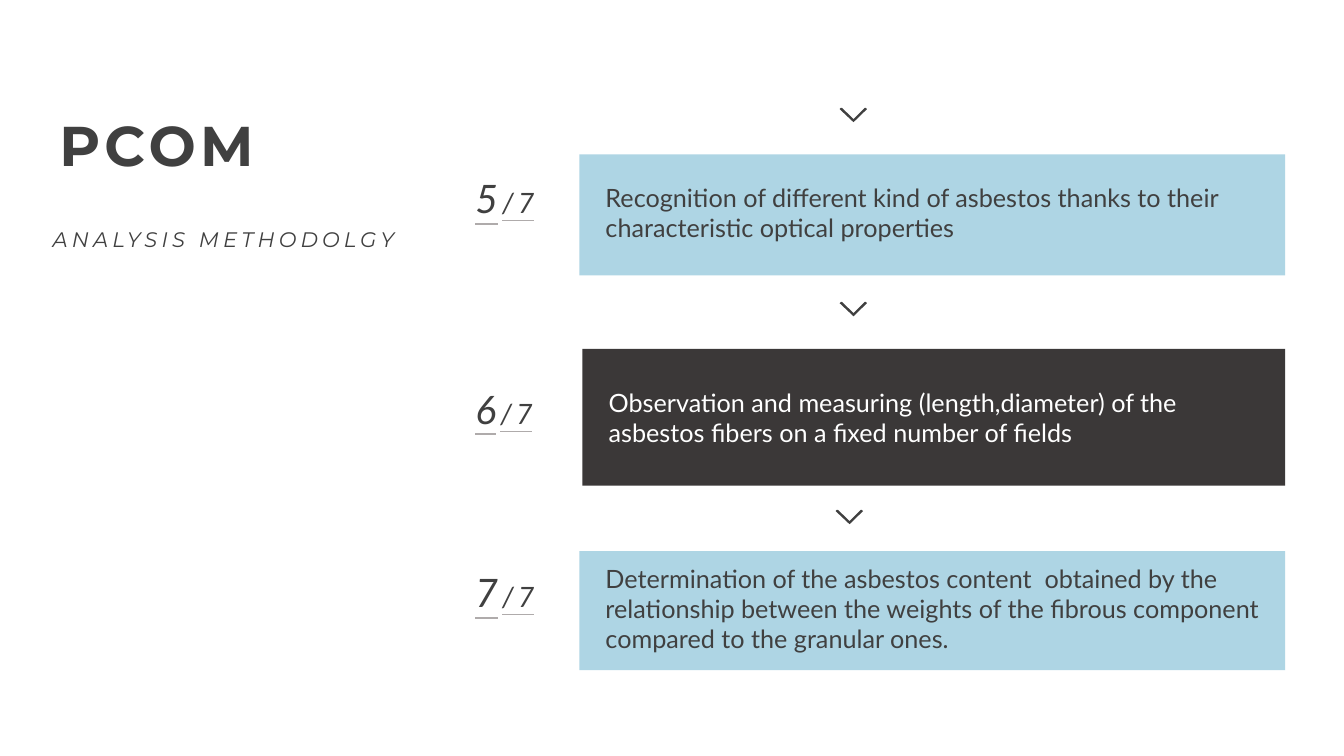
from lxml import etree
from pptx import Presentation
from pptx.dml.color import RGBColor
from pptx.enum import shapes, text as t
from pptx.oxml import ns
from pptx.util import Cm, Pt

GREY, DARK, BLUE, WHITE = "404040", "3B3838", "AED5E4", "FFFFFF"
UNDERLINE = "AFABAB"
BOX_RIGHT = 32.39

# label, label top, box left, top, height, fill, text colour, bottom inset,
# chevron left, chevron top, wording
STEPS = [
    ("5", 4.27, 14.6, 3.89, 3.05, BLUE, GREY, 0.25, 21.16, 2.72,
     "Recognition of different kind of asbestos thanks to their "
     "characteristic optical properties"),
    ("6", 9.58, 14.68, 8.79, 3.45, DARK, WHITE, 0.13, 21.16, 7.61,
     "Observation and measuring (length,diameter) of the asbestos fibers "
     "on a fixed number of fields"),
    ("7", 14.2, 14.6, 13.89, 3, BLUE, GREY, 0.25, 21.06, 12.85,
     "Determination of the asbestos content  obtained by the relationship "
     "between the weights of the fibrous component compared to the granular "
     "ones."),
]
CHEVRON = [(0, 0.03), (0.03, 0), (0.06, 0), (0.35, 0.28),
           (0.63, 0), (0.66, 0), (0.69, 0.03), (0.35, 0.36)]


def rgb(value):
    return RGBColor.from_string(value)


def add_text(paragraph, wording, size, font="Lato", color=GREY, bold=False,
             italic=False, underline=None, spacing=0):
    """Add a run; underline is the colour of the line, spacing is in points."""
    run = paragraph.add_run()
    run.text = wording
    run.font.size, run.font.name = Pt(size), font
    run.font.bold, run.font.italic = bold, italic
    run.font.color.rgb = rgb(color)
    properties = run.font._element
    if spacing:
        properties.set("spc", str(spacing * 100))
    if underline:
        run.font.underline = True
        line_fill = etree.Element(ns.qn("a:uFill"))
        solid = etree.SubElement(line_fill, ns.qn("a:solidFill"))
        etree.SubElement(solid, ns.qn("a:srgbClr"), val=underline)
        properties.find(ns.qn("a:solidFill")).addnext(line_fill)


def place_heading(placeholder, left, top, width, height, wording, **style):
    placeholder.left, placeholder.top = Cm(left), Cm(top)
    placeholder.width, placeholder.height = Cm(width), Cm(height)
    frame = placeholder.text_frame
    frame.vertical_anchor = t.MSO_ANCHOR.TOP
    frame.auto_size = t.MSO_AUTO_SIZE.NONE
    paragraph = frame.paragraphs[0]
    paragraph.alignment = t.PP_ALIGN.LEFT
    paragraph.space_before = Pt(0)
    add_text(paragraph, wording, font="Montserrat", spacing=3, **style)


def add_chevron(slide, left, top):
    points = [(Cm(left + x), Cm(top + y)) for x, y in CHEVRON]
    builder = slide.shapes.build_freeform(*points[0])
    builder.add_line_segments(points[1:])
    chevron = builder.convert_to_shape()
    chevron.shadow.inherit = False
    chevron.fill.solid()
    chevron.fill.fore_color.rgb = rgb(GREY)
    chevron.line.fill.background()


def add_step_box(slide, left, top, height, fill, color, bottom, wording):
    box = slide.shapes.add_shape(shapes.MSO_SHAPE.RECTANGLE, Cm(left), Cm(top),
                                 Cm(BOX_RIGHT - left), Cm(height))
    box.shadow.inherit = False
    box.fill.solid()
    box.fill.fore_color.rgb = rgb(fill)
    box.line.fill.background()
    frame = box.text_frame
    frame.word_wrap = True
    frame.vertical_anchor = t.MSO_ANCHOR.MIDDLE
    frame.margin_left, frame.margin_bottom = Cm(0.66), Cm(bottom)
    frame.paragraphs[0].alignment = t.PP_ALIGN.LEFT
    add_text(frame.paragraphs[0], wording, 18, color=color)


def add_step_number(slide, top, number):
    label = slide.shapes.add_textbox(Cm(11.73), Cm(top), Cm(2.46), Cm(1.45))
    label.text_frame.word_wrap = True
    paragraph = label.text_frame.paragraphs[0]
    for wording, size in ((number, 28), (f"/{len('1234567')}", 20)):
        add_text(paragraph, wording, size, italic=True, underline=UNDERLINE,
                 spacing=3)


def main():
    deck = Presentation()
    deck.slide_width, deck.slide_height = Cm(33.87), Cm(19.05)
    slide = deck.slides.add_slide(deck.slide_layouts[0])
    title, subtitle = slide.placeholders
    place_heading(title, 1.24, 2.67, 32.39, 1.96, "PCOM", size=40, bold=True)
    place_heading(subtitle, 1.07, 5.59, 18.62, 0.89, "ANALYSIS METHODOLGY",
                  size=15, italic=True)
    for (number, number_top, left, top, height, fill, color, bottom,
         chevron_left, chevron_top, wording) in STEPS:
        add_chevron(slide, chevron_left, chevron_top)
        add_step_box(slide, left, top, height, fill, color, bottom, wording)
        add_step_number(slide, number_top, number)
    deck.save("out.pptx")


if __name__ == "__main__":
    main()
